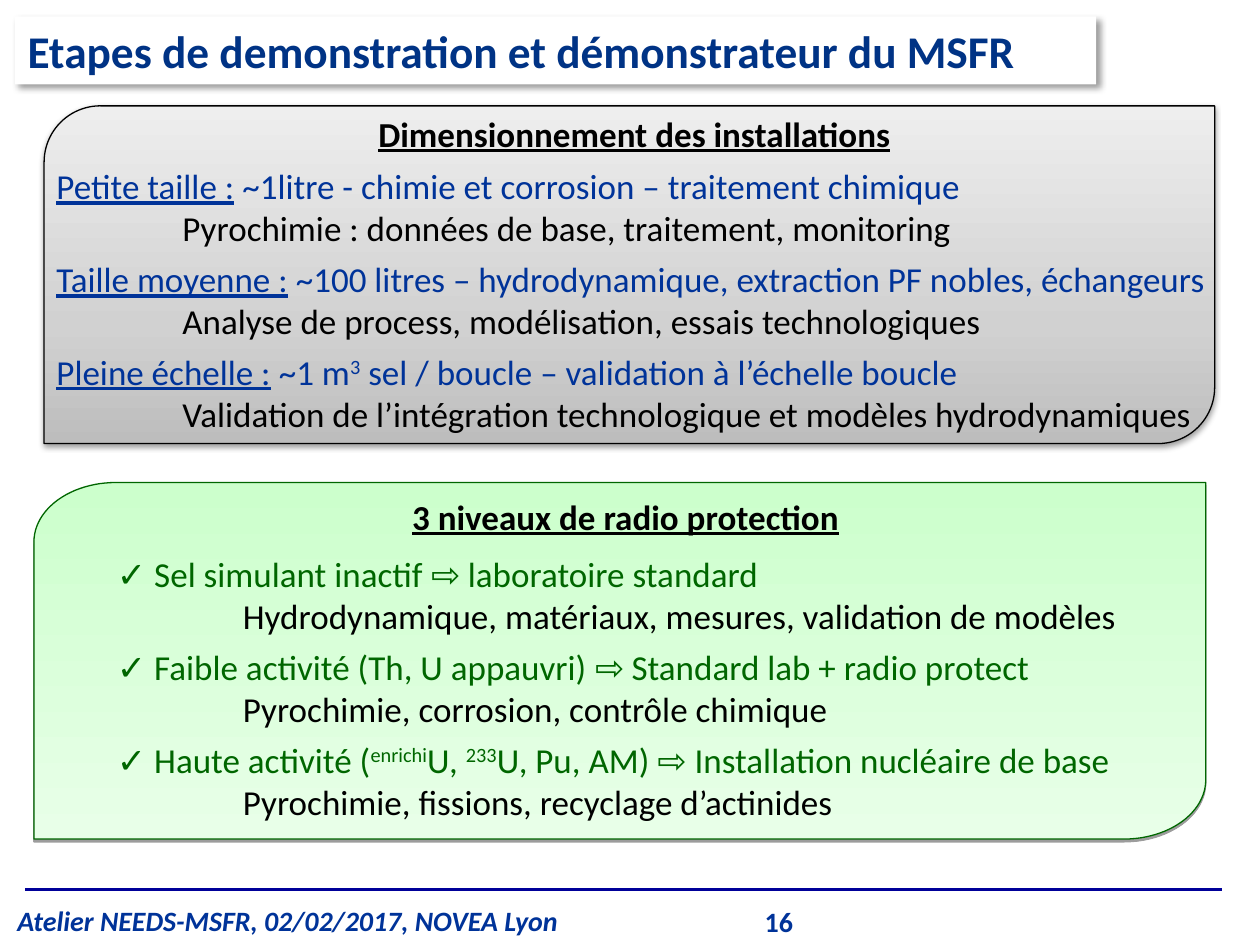
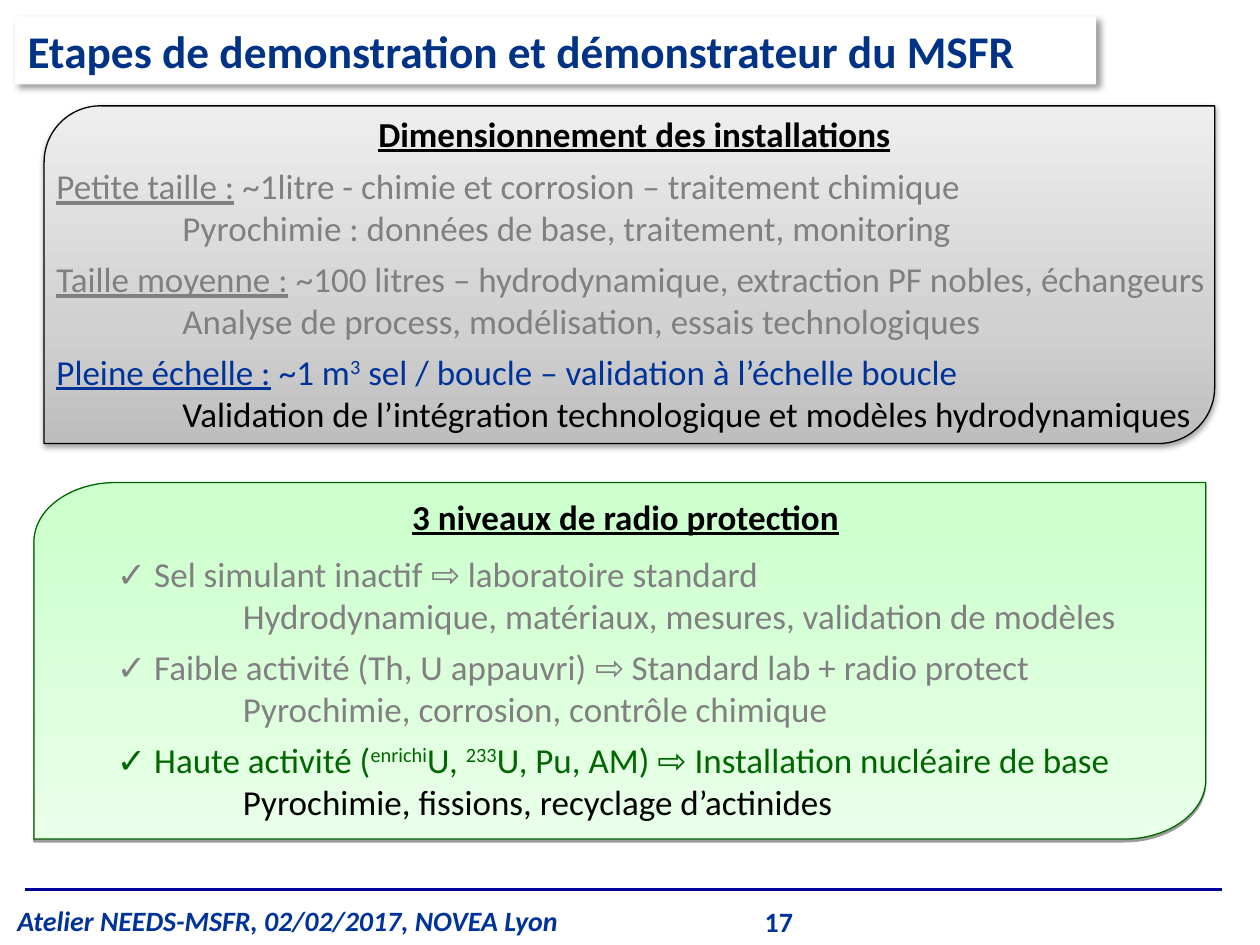
from math import cos, pi, sin

from lxml.etree import SubElement
from pptx import Presentation
from pptx.dml.color import RGBColor
from pptx.enum.shapes import MSO_CONNECTOR as Connector, MSO_SHAPE as Preset
from pptx.enum.text import MSO_ANCHOR as Anchor, PP_ALIGN as Align
from pptx.oxml.ns import qn
from pptx.util import Inches, Pt

WHITE = RGBColor(0xFF, 0xFF, 0xFF)
BLACK = RGBColor(0, 0, 0)
BLUE = RGBColor(0, 0x33, 0x99)
TITLE_BLUE = RGBColor(0, 0x33, 0x85)
RULE_BLUE = RGBColor(0, 0, 0x99)
GREEN = RGBColor(0, 0x66, 0)
MUTED = RGBColor(0x80, 0x80, 0x80)
GREY_FADE = [(0, "EEEEEE"), (65, "D1D1D1"), (100, "BDBDBD")]
GREEN_FADE = [(0, "CCFFCC"), (100, "E8FFE8")]

TITLE = "Etapes de demonstration et démonstrateur du MSFR"
FOOTER = "Atelier NEEDS-MSFR, 02/02/2017, NOVEA Lyon"
SIZES = [
    ("Petite taille :", " ~1litre - chimie et corrosion – traitement chimique",
     "Pyrochimie : données de base, traitement, monitoring"),
    ("Taille moyenne :", " ~100 litres – hydrodynamique, extraction PF nobles, échangeurs",
     "Analyse de process, modélisation, essais technologiques"),
    ("Pleine échelle :", " ~1 m^3^ sel / boucle – validation à l’échelle boucle",
     "Validation de l’intégration technologique et modèles hydrodynamiques"),
]
LEVELS = [
    ("", "✓ Sel simulant inactif ⇨ laboratoire standard",
     "Hydrodynamique, matériaux, mesures, validation de modèles"),
    ("", "✓ Faible activité (Th, U appauvri) ⇨ Standard lab + radio protect",
     "Pyrochimie, corrosion, contrôle chimique"),
    ("", "✓ Haute activité (^enrichi^U, ^233^U, Pu, AM) ⇨ Installation nucléaire de base",
     "Pyrochimie, fissions, recyclage d’actinides"),
]


def write(para, text, size=20, color=BLACK, bold=False, italic=False, underline=False):
    """Add text to a paragraph, raising the parts between carets."""
    for index, part in enumerate(text.split("^")):
        span = para.add_run()
        span.text = part
        font = span.font
        font.name, font.size, font.color.rgb = "Calibri", Pt(size), color
        font.bold, font.italic, font.underline = bold, italic, underline
        if index % 2:
            font._element.set("baseline", "30000")


class Builder:
    """Holds the deck style and the page being drawn."""

    def __init__(self):
        """Open an empty 10 by 7.5 inch deck."""
        self.deck = Presentation()
        self.deck.slide_width, self.deck.slide_height = Inches(10), Inches(7.5)
        self.page = None

    def add_page(self, number):
        """Start a page with its rule and footer."""
        self.page = self.deck.slides.add_slide(self.deck.slide_layouts[6])
        self.rule(0.2, 9.7, 7.06)
        footer = self.text_box(0.04, 7.12, 7.56, 0.37)
        write(footer.paragraphs[0], FOOTER, size=16, color=BLUE, bold=True, italic=True)
        counter = self.text_box(5.97, 7.13, 0.68, 0.4)
        write(counter.paragraphs[0], str(number), size=16, color=BLUE, bold=True)

    def rule(self, left, right, top):
        """Draw the horizontal footer line."""
        line = self.page.shapes.add_connector(
            Connector.STRAIGHT, Inches(left), Inches(top), Inches(right), Inches(top))
        line.line.color.rgb, line.line.width = RULE_BLUE, Pt(1.5)
        SubElement(line._element.spPr, qn("a:effectLst"))

    def text_box(self, left, top, width, height):
        """Add a wrapping text box and return its frame."""
        box = self.page.shapes.add_textbox(*map(Inches, (left, top, width, height)))
        box.text_frame.word_wrap = True
        return box.text_frame

    def shadow(self, shape, alpha, blur, distance, angle):
        """Give a shape a black outer shadow."""
        shape.shadow.inherit = False
        effects = shape._element.spPr.find(qn("a:effectLst"))
        outer = SubElement(effects, qn("a:outerShdw"), blurRad=str(Pt(blur)),
                           dist=str(Pt(distance)), dir=str(angle * 60000),
                           algn="t", rotWithShape="0")
        color = SubElement(outer, qn("a:srgbClr"), val=str(BLACK))
        SubElement(color, qn("a:alpha"), val=str(alpha * 1000))

    def fade(self, shape, stops, outline):
        """Fill a shape from top to bottom and outline it."""
        shape.fill.gradient()
        shape.fill.gradient_angle = 270
        stop_list = shape._element.spPr.find(qn("a:gradFill")).find(qn("a:gsLst"))
        for stop in list(stop_list):
            stop_list.remove(stop)
        for position, color in stops:
            stop = SubElement(stop_list, qn("a:gs"), pos=str(position * 1000))
            SubElement(stop, qn("a:srgbClr"), val=color)
        shape.line.color.rgb, shape.line.width = outline, Pt(0.75)

    def title(self, text):
        """Draw the raised title band."""
        band = self.page.shapes.add_shape(
            Preset.RECTANGLE, *map(Inches, (0.12, 0.13, 8.58, 0.54)))
        band.fill.solid()
        band.fill.fore_color.rgb = WHITE
        band.line.fill.background()
        self.shadow(band, 40, 4, 3, 45)
        frame = band.text_frame
        frame.vertical_anchor = Anchor.MIDDLE
        para = frame.paragraphs[0]
        para.alignment, para.space_before = Align.LEFT, Pt(5)
        write(para, text, size=25.9, color=TITLE_BLUE, bold=True)

    def size_panel(self):
        """Draw the grey panel with two round corners."""
        panel = self.page.shapes.add_shape(
            Preset.ROUND_2_DIAG_RECTANGLE, *map(Inches, (0.35, 0.84, 9.29, 2.68)))
        self.fade(panel, GREY_FADE, BLACK)
        self.shadow(panel, 38, 3.1, 1.6, 90)

    def level_panel(self, left=0.27, top=3.83, right=9.57, bottom=6.66, across=0.65, down=0.47):
        """Draw the green panel with two elliptical corners."""
        turns = [step * pi / 48 for step in range(25)]
        points = [(right, top)]
        points += [(right - across + across * cos(turn), bottom - down + down * sin(turn))
                   for turn in turns]
        points += [(left, bottom)]
        points += [(left + across - across * cos(turn), top + down - down * sin(turn))
                   for turn in turns]
        points = [(Inches(x), Inches(y)) for x, y in points]
        outline = self.page.shapes.build_freeform(*points[0])
        outline.add_line_segments(points[1:], close=True)
        panel = outline.convert_to_shape()
        self.fade(panel, GREEN_FADE, GREEN)
        self.shadow(panel, 38, 0, 1.6, 90)

    def topics(self, place, heading, gap, entries, accent, muted):
        """Write a heading and its entries, with the first ones muted."""
        frame = self.text_box(*place)
        para = frame.paragraphs[0]
        para.alignment, para.space_after = Align.CENTER, Pt(gap)
        write(para, heading, bold=True, underline=True)
        for index, (label, summary, detail) in enumerate(entries):
            dim = index < muted
            color = MUTED if dim else accent
            para = frame.add_paragraph()
            para.space_before = Pt(5 if index else 0)
            if label:
                write(para, label, color=color, underline=True)
            write(para, summary, color=color)
            para = frame.add_paragraph()
            para._p.get_or_add_pPr().set("marL", str(Inches(1)))
            write(para, detail, color=MUTED if dim else BLACK)


def main():
    """Build both pages and save the deck."""
    builder = Builder()
    for number, muted in ((16, 0), (17, 2)):
        builder.add_page(number)
        builder.size_panel()
        builder.topics((0.35, 0.84, 9.37, 2.73), "Dimensionnement des installations",
                       6, SIZES, BLUE, muted)
        builder.level_panel()
        builder.topics((0.83, 3.88, 8.27, 2.78), "3 niveaux de radio protection",
                       9, LEVELS, GREEN, muted)
        builder.title(TITLE)
    builder.deck.save("out.pptx")


if __name__ == "__main__":
    main()
